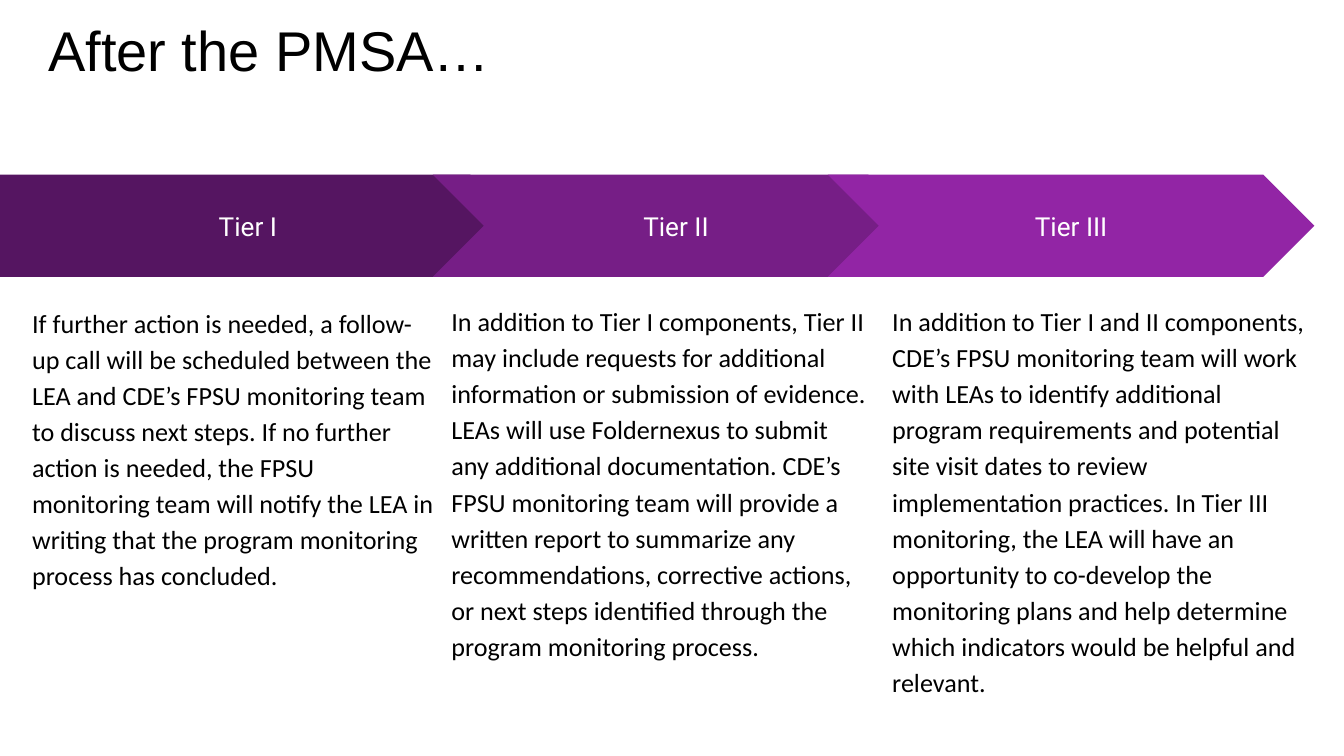
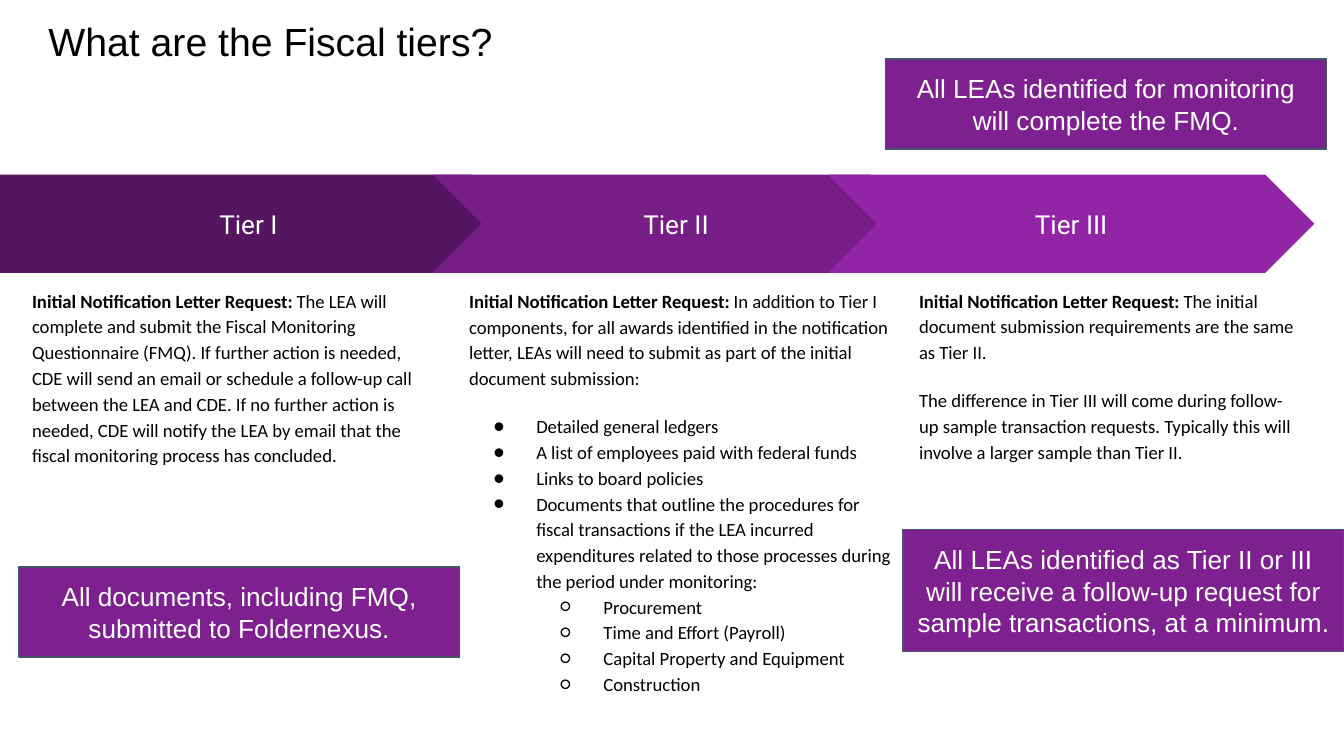
from dataclasses import dataclass

from lxml import etree
from pptx import Presentation, util as u
from pptx.dml.color import RGBColor
from pptx.enum import shapes, text
from pptx.oxml.ns import qn

COLORS = {
    "ink": "000000",
    "paper": "FFFFFF",
    "tier 1": "551561",
    "tier 2": "761E86",
    "tier 3": "9225A5",
    "callout": "7F2090",
    "callout line": "44546A",
}
WIDTH, HEIGHT = u.Inches(10), u.Inches(5.625)
COLUMN, ROW = WIDTH / 100, HEIGHT / 56.25
INSET = u.Inches(0.1)
BULLETS = ("●", "○")
BULLET_INDENT, BULLET_HANG = u.Inches(0.5), u.Inches(-0.32)
BAND_TOP = 13
SECOND_BAND_LEFT, BAND_STEP = 32.2, 29.4
LETTER = "Initial Notification Letter Request: "


@dataclass(frozen=True)
class Area:
    """Left, top, width and height in grid columns and rows."""
    left: float
    top: float
    width: float
    height: float

    def lengths(self) -> tuple[int, int, int, int]:
        return (round(self.left * COLUMN), round(self.top * ROW),
                round(self.width * COLUMN), round(self.height * ROW))


@dataclass(frozen=True)
class Style:
    font: str
    size: float
    color: str
    align: text.PP_ALIGN = text.PP_ALIGN.LEFT
    spacing: float = 1.0


@dataclass(frozen=True)
class Entry:
    """One paragraph: an optional bold lead, then plain wording."""
    wording: str
    lead: str = ""
    bullet_level: int | None = None
    space_before: float = 0


@dataclass(frozen=True)
class Column:
    area: Area
    entries: list[Entry]
    in_placeholder: bool = False


@dataclass(frozen=True)
class Callout:
    area: Area
    wording: str


@dataclass(frozen=True)
class TierSlide:
    title: str
    title_size: float
    band_height: float
    body_size: float
    columns: list[Column]
    callouts: list[Callout]


TITLE_AREA = Area(3.6, 1.7, 66.2, 7.4)
BAND_STYLE = Style("Roboto", 14, "paper", text.PP_ALIGN.CENTER)
CALLOUT_STYLE = Style("Arial", 14, "paper", text.PP_ALIGN.CENTER)

SLIDES = [
    TierSlide("After the PMSA…", 30, 7.6, 14, [
        Column(Area(1.4, 21.5, 31.9, 31.1), [Entry(
            "If further action is needed, a follow-up call will be scheduled between the LEA "
            "and CDE’s FPSU monitoring team to discuss next steps. If no further action is "
            "needed, the FPSU monitoring team will notify the LEA in writing that the program "
            "monitoring process has concluded.")]),
        Column(Area(32.6, 21.4, 33.2, 31.1), [Entry(
            "In addition to Tier I components, Tier II may include requests for additional "
            "information or submission of evidence. LEAs will use Foldernexus to submit any "
            "additional documentation. CDE’s FPSU monitoring team will provide a written "
            "report to summarize any recommendations, corrective actions, or next steps "
            "identified through the program monitoring process.")]),
        Column(Area(65.4, 21.4, 33.1, 30.8), [Entry(
            "In addition to Tier I and II components, CDE’s FPSU monitoring team will work "
            "with LEAs to identify additional program requirements and potential site visit "
            "dates to review implementation practices. In Tier III monitoring, the LEA will "
            "have an opportunity to co-develop the monitoring plans and help determine which "
            "indicators would be helpful and relevant.")]),
    ], []),
    TierSlide("What are the Fiscal tiers?", 21, 7.3, 10, [
        Column(Area(1.4, 20.3, 31.9, 28.6), [Entry(
            "The LEA will complete and submit the Fiscal Monitoring Questionnaire (FMQ). If "
            "further action is needed, CDE will send an email or schedule a follow-up call "
            "between the LEA and CDE. If no further action is needed, CDE will notify the LEA "
            "by email that the fiscal monitoring process has concluded.", LETTER)]),
        Column(Area(33.9, 20.3, 33.5, 28.6), [
            Entry("In addition to Tier I components, for all awards identified in the "
                  "notification letter, LEAs will need to submit as part of the initial "
                  "document submission:", LETTER),
            Entry("Detailed general ledgers", bullet_level=0, space_before=12),
            Entry("A list of employees paid with federal funds", bullet_level=0),
            Entry("Links to board policies", bullet_level=0),
            Entry("Documents that outline the procedures for fiscal transactions if the LEA "
                  "incurred expenditures related to those processes during the period under "
                  "monitoring:", bullet_level=0),
            Entry("Procurement", bullet_level=1),
            Entry("Time and Effort (Payroll)", bullet_level=1),
            Entry("Capital Property and Equipment", bullet_level=1),
            Entry("Construction", bullet_level=1),
        ], in_placeholder=True),
        Column(Area(67.4, 20.3, 30.3, 28.6), [
            Entry("The initial document submission requirements are the same as Tier II.",
                  LETTER),
            Entry("The difference in Tier III will come during follow-up sample transaction "
                  "requests. Typically this will involve a larger sample than Tier II.",
                  space_before=12),
        ]),
    ], [
        Callout(Area(65.9, 4.4, 32.8, 6.7),
                "All LEAs identified for monitoring will complete the FMQ."),
        Callout(Area(1.4, 42.2, 32.8, 6.7),
                "All documents, including FMQ, submitted to Foldernexus."),
        Callout(Area(67.2, 39.4, 32.8, 9.1),
                "All LEAs identified as Tier II or III will receive a follow-up request for "
                "sample transactions, at a minimum."),
    ]),
]


def color(name: str) -> RGBColor:
    return RGBColor.from_string(COLORS[name])


def add_run(paragraph, wording: str, style: Style, bold: bool = False) -> None:
    run = paragraph.add_run()
    run.text = wording
    run.font.name, run.font.size = style.font, u.Pt(style.size)
    run.font.bold = bold
    run.font.color.rgb = color(style.color)


def set_bullet(paragraph, level: int | None, style: Style) -> None:
    """Set indents and bullet; a level of None gives a plain paragraph."""
    properties = paragraph._p.get_or_add_pPr()
    if level is None:
        properties.set("marL", "0")
        properties.set("indent", "0")
        etree.SubElement(properties, qn("a:buNone"))
        return
    paragraph.level = level
    properties.set("marL", str(BULLET_INDENT * (level + 1)))
    properties.set("indent", str(BULLET_HANG))
    bullet_color = etree.SubElement(properties, qn("a:buClr"))
    etree.SubElement(bullet_color, qn("a:srgbClr"), val=COLORS[style.color])
    etree.SubElement(properties, qn("a:buFont"), typeface=style.font)
    etree.SubElement(properties, qn("a:buChar"), char=BULLETS[level])


def write(shape, entries: list[Entry], style: Style, inset: int = INSET,
          anchor: text.MSO_ANCHOR = text.MSO_ANCHOR.TOP) -> None:
    frame = shape.text_frame
    frame.word_wrap, frame.auto_size = True, text.MSO_AUTO_SIZE.NONE
    frame.vertical_anchor = anchor
    frame.margin_left = frame.margin_top = frame.margin_right = frame.margin_bottom = inset
    for index, entry in enumerate(entries):
        paragraph = frame.add_paragraph() if index else frame.paragraphs[0]
        set_bullet(paragraph, entry.bullet_level, style)
        paragraph.alignment, paragraph.line_spacing = style.align, style.spacing
        paragraph.space_before = u.Pt(entry.space_before)
        if entry.lead:
            add_run(paragraph, entry.lead, style, bold=True)
        add_run(paragraph, entry.wording, style)


def move(shape, area: Area) -> None:
    shape.left, shape.top, shape.width, shape.height = area.lengths()


def add_panel(slide, kind: shapes.MSO_SHAPE, area: Area, fill: str, wording: str,
              style: Style, line: str | None = None) -> None:
    """Add a filled shape with centred wording."""
    shape = slide.shapes.add_shape(kind, *area.lengths())
    shape.shadow.inherit = False
    shape.fill.solid()
    shape.fill.fore_color.rgb = color(fill)
    if line:
        shape.line.color.rgb = color(line)
        shape.line.width = u.Pt(0.75)
    else:
        shape.line.fill.background()
    write(shape, [Entry(wording)], style, anchor=text.MSO_ANCHOR.MIDDLE)


def add_tier_band(slide, number: int, height: float) -> None:
    if number == 1:
        kind, left, width = shapes.MSO_SHAPE.PENTAGON, 0, 38.8
    else:
        kind, width = shapes.MSO_SHAPE.CHEVRON, 36.2
        left = SECOND_BAND_LEFT + BAND_STEP * (number - 2)
    add_panel(slide, kind, Area(left, BAND_TOP, width, height), f"tier {number}",
              "Tier " + "I" * number, BAND_STYLE)


def add_column(slide, column: Column, size: float) -> None:
    if column.in_placeholder:
        shape = slide.placeholders[1]
        move(shape, column.area)
    else:
        shape = slide.shapes.add_textbox(*column.area.lengths())
    write(shape, column.entries, Style("Calibri", size, "ink", spacing=1.15))


def add_tier_slide(presentation, content: TierSlide) -> None:
    has_list = any(column.in_placeholder for column in content.columns)
    layout = "Title and Content" if has_list else "Title Only"
    slide = presentation.slides.add_slide(presentation.slide_layouts.get_by_name(layout))
    slide.background.fill.solid()
    slide.background.fill.fore_color.rgb = color("paper")
    move(slide.shapes.title, TITLE_AREA)
    write(slide.shapes.title, [Entry(content.title)],
          Style("Arial", content.title_size, "ink", spacing=0.9), inset=0)
    for callout in content.callouts:
        add_panel(slide, shapes.MSO_SHAPE.RECTANGLE, callout.area, "callout",
                  callout.wording, CALLOUT_STYLE, "callout line")
    for number, column in enumerate(content.columns, start=1):
        add_tier_band(slide, number, content.band_height)
        add_column(slide, column, content.body_size)


def main() -> None:
    presentation = Presentation()
    presentation.slide_width, presentation.slide_height = WIDTH, HEIGHT
    for content in SLIDES:
        add_tier_slide(presentation, content)
    presentation.save("out.pptx")


if __name__ == "__main__":
    main()
